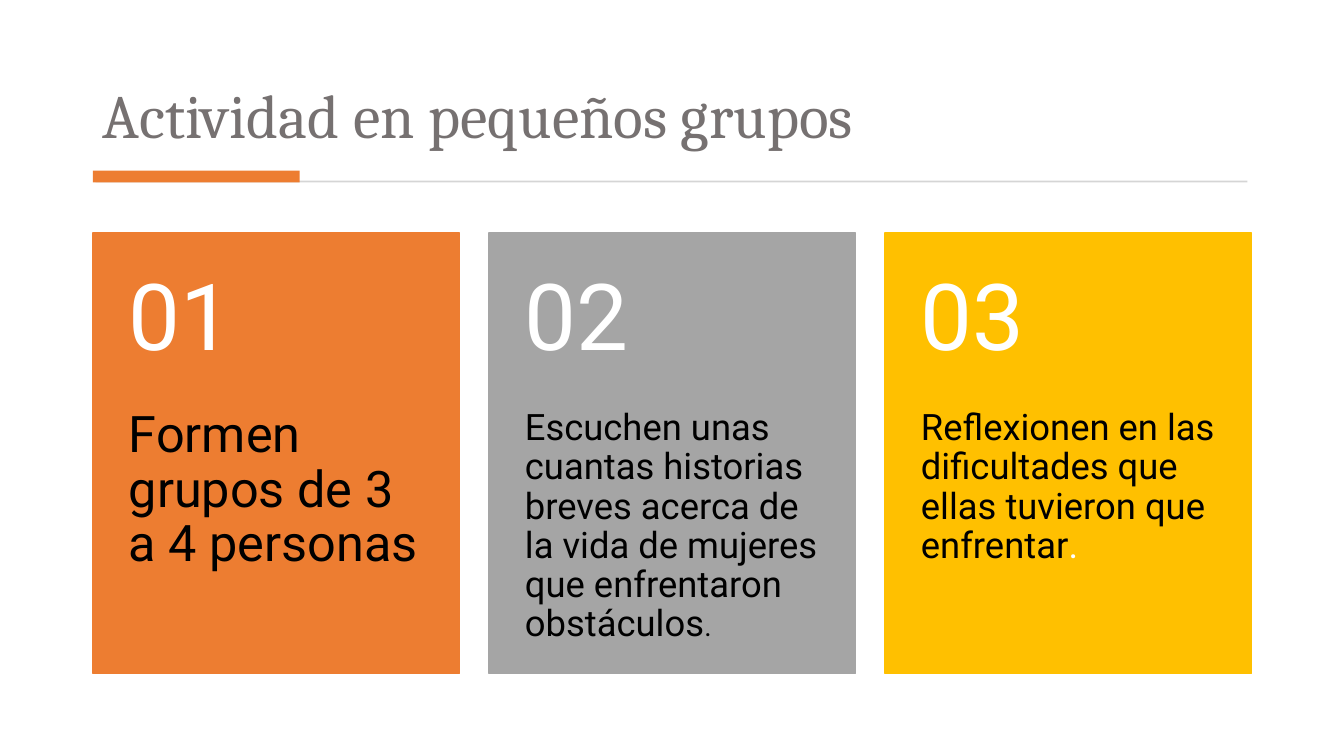
from dataclasses import dataclass

from pptx import Presentation
from pptx.dml.color import RGBColor
from pptx.enum.shapes import MSO_SHAPE
from pptx.enum.text import MSO_ANCHOR, PP_ALIGN
from pptx.util import Cm, Pt


@dataclass(frozen=True)
class Theme:
    heading_font: str = "Cambria"
    body_font: str = "Roboto"
    heading: str = "767171"
    rule: str = "D5D5D5"
    accent: str = "ED7D31"
    cards: tuple = ("ED7D31", "A5A5A5", "FFC000")
    dark: str = "000000"
    light: str = "FFFFFF"
    heading_size: int = 44
    number_size: int = 66
    large_size: int = 36
    body_size: int = 26
    small_size: int = 20


THEME = Theme()

# Each step is a list of runs: text, size, colour
STEPS = [
    [("Formen grupos de 3 a 4 personas", THEME.large_size, THEME.dark)],
    [("Escuchen unas cuantas historias breves acerca de la vida de mujeres "
      "que enfrentaron obstáculos", THEME.body_size, THEME.dark),
     (".", THEME.small_size, THEME.dark)],
    [("Reflexionen en las dificultades que ellas tuvieron que enfrentar",
      THEME.body_size, THEME.dark),
     (".", THEME.body_size, THEME.light)],
]


def add_block(slide, left, top, width, height, color, outlined=False):
    shape = slide.shapes.add_shape(
        MSO_SHAPE.RECTANGLE, Cm(left), Cm(top), Cm(width), Cm(height))
    shape.shadow.inherit = False
    shape.fill.solid()
    shape.fill.fore_color.rgb = RGBColor.from_string(color)
    if outlined:
        shape.line.color.rgb = RGBColor.from_string(color)
        shape.line.width = Pt(1)
    else:
        shape.line.fill.background()


def add_text(slide, left, top, width, height, runs, font, anchor, margins):
    """Place one paragraph; margins are left, top, right, bottom in cm."""
    box = slide.shapes.add_textbox(Cm(left), Cm(top), Cm(width), Cm(height))
    frame = box.text_frame
    sides = ("margin_left", "margin_top", "margin_right", "margin_bottom")
    settings = {"word_wrap": True, "vertical_anchor": anchor}
    settings.update(zip(sides, map(Cm, margins)))
    for name, value in settings.items():
        setattr(frame, name, value)
    paragraph = frame.paragraphs[0]
    paragraph.alignment = PP_ALIGN.LEFT
    paragraph.line_spacing = 0.9
    for text, size, color in runs:
        run = paragraph.add_run()
        run.text = text
        for name, value in {"name": font, "size": Pt(size)}.items():
            setattr(run.font, name, value)
        run.font.color.rgb = RGBColor.from_string(color)


def add_heading(slide, left, top, width, height, title):
    """Title above a thin rule whose left end carries an accent bar."""
    add_text(slide, left, top, width, height - 0.64,
             [(title, THEME.heading_size, THEME.heading)],
             THEME.heading_font, MSO_ANCHOR.BOTTOM, (0.25, 0.13, 0.25, 0.13))
    bottom = top + height
    add_block(slide, left + 0.07, bottom - 0.05, width - 0.15, 0.05, THEME.rule)
    add_block(slide, left, bottom - 0.3, 5.21, 0.3, THEME.accent)


def add_card(slide, left, top, width, height, number, runs, color):
    """Coloured card: the number in the top 40 %, the step below it."""
    number_height = height * 0.4
    add_block(slide, left, top, width, height, color, outlined=True)
    add_text(slide, left, top + number_height, width, height - number_height,
             runs, THEME.body_font, MSO_ANCHOR.TOP, (0.91, 0, 0.91, 0.91))
    add_text(slide, left, top, width, number_height,
             [(f"{number:02}", THEME.number_size, THEME.light)],
             THEME.body_font, MSO_ANCHOR.MIDDLE, (0.91, 0.46, 0.91, 0.46))


def add_cards(slide, left, top, width, height, steps, gap=0.74):
    card_width = (width - gap * (len(steps) - 1)) / len(steps)
    for index, (runs, color) in enumerate(zip(steps, THEME.cards)):
        add_card(slide, left + index * (card_width + gap), top,
                 card_width, height, index + 1, runs, color)


def main():
    presentation = Presentation()
    presentation.slide_width = Cm(33.87)
    presentation.slide_height = Cm(19.05)
    slide = presentation.slides.add_slide(presentation.slide_layouts[6])
    add_heading(slide, 2.34, 1.14, 29.18, 3.46, "Actividad en pequeños grupos")
    add_cards(slide, 2.34, 5.87, 29.2, 11.1, STEPS)
    presentation.save("out.pptx")


if __name__ == "__main__":
    main()
